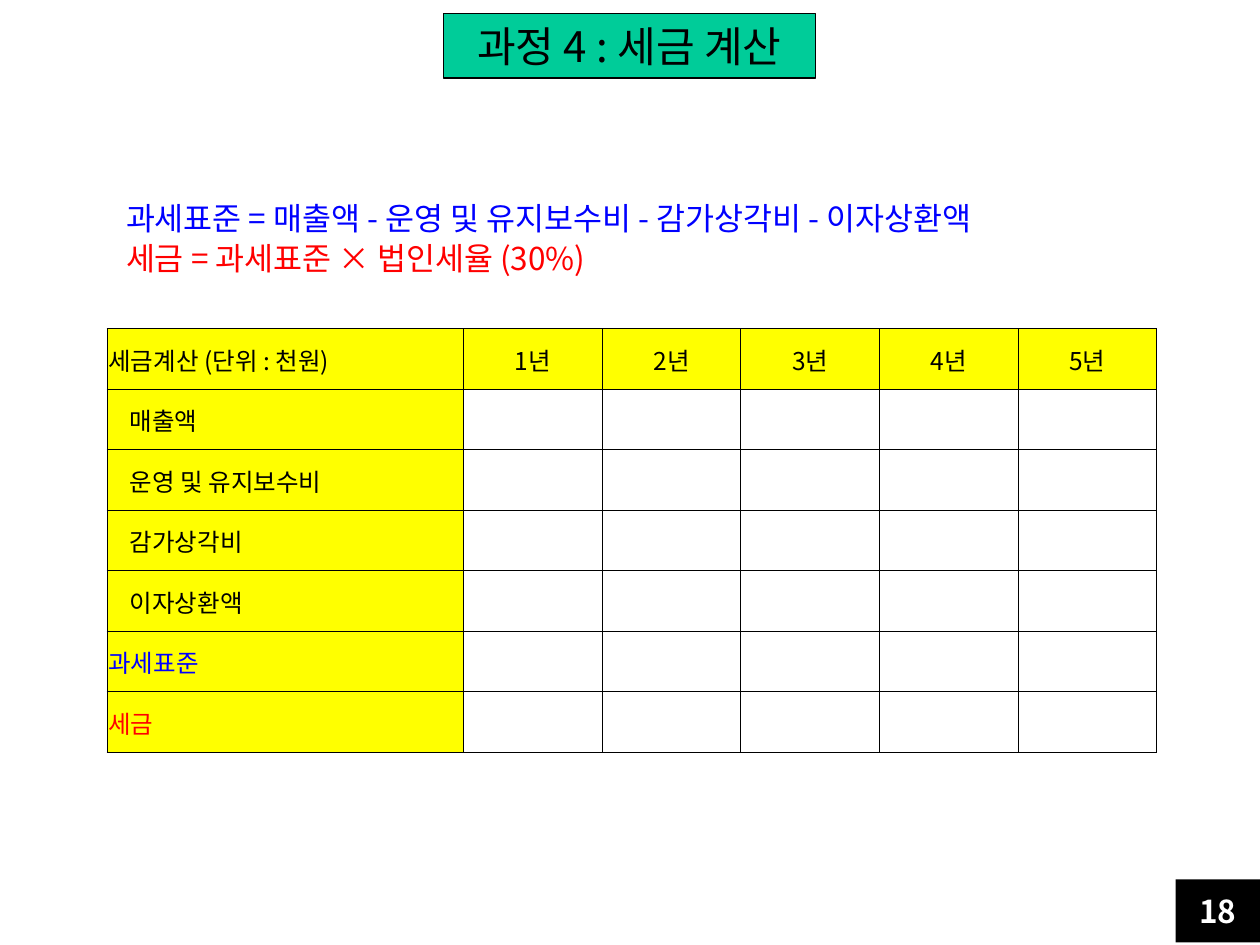
import pptx
import pptx.util
import pptx.dml.color
import pptx.enum.shapes
import pptx.enum.text
import pptx.oxml.ns
import lxml.etree

FONT = "Noto Sans CJK KR"
COLORS = {"black": "000000", "white": "FFFFFF", "yellow": "FFFF00",
          "green": "00CC99", "blue": "0000FF", "red": "FF0000"}
CENTER = pptx.enum.text.PP_ALIGN.CENTER
LEFT = pptx.enum.text.PP_ALIGN.LEFT
MIDDLE = pptx.enum.text.MSO_ANCHOR.MIDDLE
TOP = pptx.enum.text.MSO_ANCHOR.TOP
NO_FIT = pptx.enum.text.MSO_AUTO_SIZE.NONE
Inches = pptx.util.Inches


def rgb(name):
    return pptx.dml.color.RGBColor.from_string(COLORS[name])


def write(paragraph, text, size, color, alignment=LEFT, bold=False):
    """Fill a paragraph with one run, setting the font for Latin and Korean."""
    paragraph.alignment = alignment
    run = paragraph.add_run()
    run.text = text
    for name, value in {"name": FONT, "size": pptx.util.Pt(size), "bold": bold}.items():
        setattr(run.font, name, value)
    run.font.color.rgb = rgb(color)
    east_asian = lxml.etree.SubElement(run.font._element, pptx.oxml.ns.qn("a:ea"))
    east_asian.set("typeface", FONT)


presentation = pptx.Presentation()
presentation.slide_width, presentation.slide_height = Inches(10), Inches(7.5)
slide = presentation.slides.add_slide(presentation.slide_layouts[1])
title, body = slide.placeholders
number_box = slide.shapes.add_shape(
    pptx.enum.shapes.MSO_SHAPE.RECTANGLE, 0, 0, Inches(1), Inches(1))
number_box.shadow.inherit = False

# Places and frames
frames = [(title, (3.52, 0.11, 2.95, 0.51), MIDDLE, "green"),
          (body, (0.9, 1.56, 7.94, 0.71), TOP, None),
          (number_box, (9.33, 6.98, 0.67, 0.5), MIDDLE, "black")]
for shape, place, anchor, fill in frames:
    for name, value in zip(("left", "top", "width", "height"), place):
        setattr(shape, name, Inches(value))
    frame_format = {"auto_size": NO_FIT, "word_wrap": False, "vertical_anchor": anchor}
    for name, value in frame_format.items():
        setattr(shape.text_frame, name, value)
    if fill:
        shape.fill.solid()
        shape.fill.fore_color.rgb = rgb(fill)

title.line.color.rgb = rgb("black")
title.line.width = pptx.util.Pt(0.75)
number_box.line.fill.background()
write(title.text_frame.paragraphs[0], "과정 4 : 세금 계산", 24, "black", CENTER)
write(number_box.text_frame.paragraphs[0], "18", 18, "white", CENTER, True)

# Formulas
formulas = [("과세표준 = 매출액 - 운영 및 유지보수비 - 감가상각비 - 이자상환액", "blue"),
            ("세금 = 과세표준 × 법인세율 (30%)", "red")]
for index, (text, color) in enumerate(formulas):
    paragraphs = body.text_frame
    paragraph = paragraphs.add_paragraph() if index else paragraphs.paragraphs[0]
    write(paragraph, text, 18, color)
    paragraph.line_spacing = 0.9
    properties = paragraph._p.get_or_add_pPr()
    properties.set("marL", "0")
    properties.set("indent", "0")
    lxml.etree.SubElement(properties, pptx.oxml.ns.qn("a:buNone"))

# Tax table: (label, colour, indent in inches)
years = [f"{year}년" for year in range(1, 6)]
rows = [("세금계산 (단위 : 천원)", "black", 0),
        ("매출액", "black", 0.17),
        ("운영 및 유지보수비", "black", 0.17),
        ("감가상각비", "black", 0.17),
        ("이자상환액", "black", 0.17),
        ("과세표준", "blue", 0),
        ("세금", "red", 0)]
row_height, label_width, year_width = 0.48, 2.83, 1.1
table = slide.shapes.add_table(
    len(rows), len(years) + 1, Inches(0.85), Inches(2.61),
    Inches(label_width + year_width * len(years)), Inches(row_height * len(rows))).table
table.first_row = table.horz_banding = False
for index, column in enumerate(table.columns):
    column.width = Inches(year_width if index else label_width)

for row_index, (label, color, indent) in enumerate(rows):
    table.rows[row_index].height = Inches(row_height)
    for column_index in range(len(years) + 1):
        cell = table.cell(row_index, column_index)
        cell_format = {"margin_left": Inches(0.01), "margin_right": Inches(0.01),
                       "margin_top": Inches(0.01), "margin_bottom": 0,
                       "vertical_anchor": MIDDLE}
        for name, value in cell_format.items():
            setattr(cell, name, value)
        paragraph = cell.text_frame.paragraphs[0]
        if column_index == 0:
            write(paragraph, label, 14, color)
            paragraph._p.get_or_add_pPr().set("marL", str(Inches(indent)))
        elif row_index == 0:
            write(paragraph, years[column_index - 1], 14, "black", CENTER)

        cell_properties = cell._tc.get_or_add_tcPr()
        for side in ("lnL", "lnR", "lnT", "lnB"):
            border = lxml.etree.SubElement(cell_properties, pptx.oxml.ns.qn(f"a:{side}"))
            border.set("w", str(pptx.util.Pt(0.5)))
            fill = lxml.etree.SubElement(border, pptx.oxml.ns.qn("a:solidFill"))
            lxml.etree.SubElement(fill, pptx.oxml.ns.qn("a:srgbClr")).set("val", COLORS["black"])
        if row_index == 0 or column_index == 0:
            cell.fill.solid()
            cell.fill.fore_color.rgb = rgb("yellow")
        else:
            cell.fill.background()

presentation.save("out.pptx")
